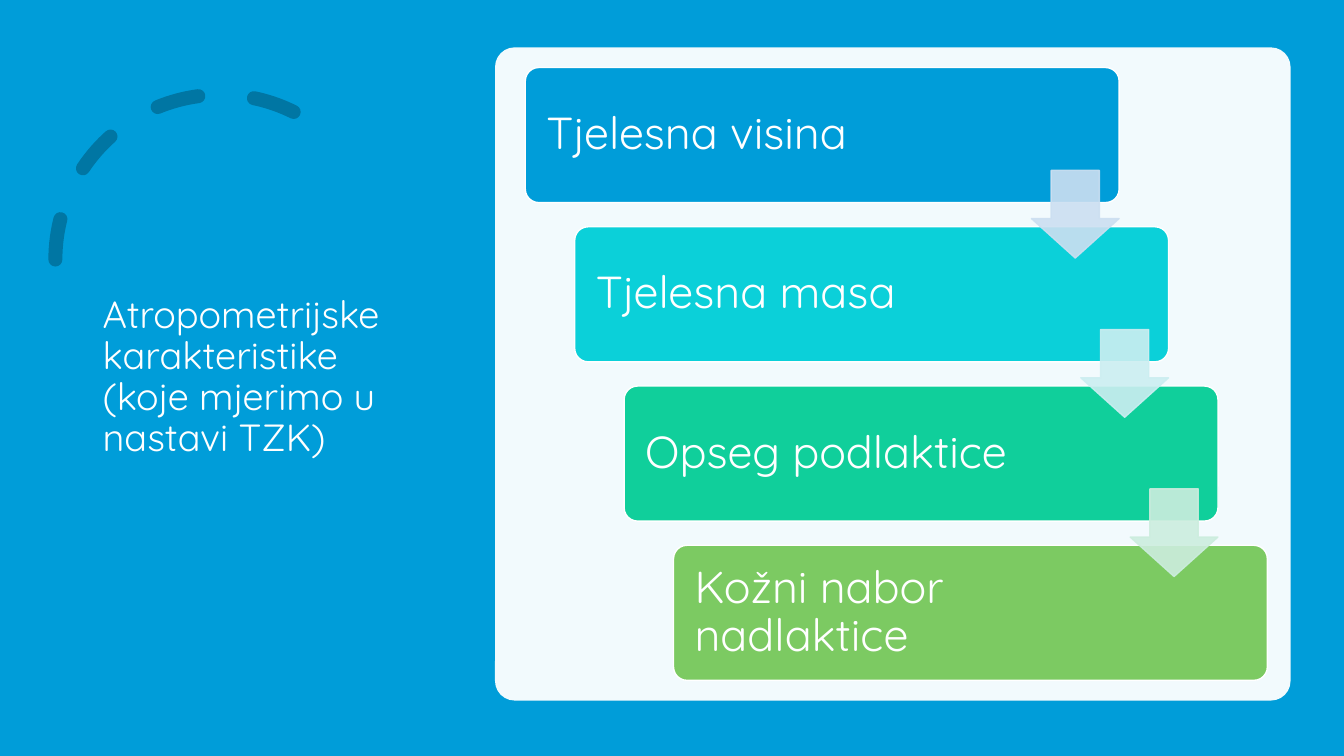
from dataclasses import dataclass

from lxml import etree
from pptx import Presentation
from pptx import util as u
from pptx.dml.color import RGBColor
from pptx.enum import dml, shapes, text
from pptx.oxml.ns import qn

PX = 9144


@dataclass(frozen=True)
class Theme:
    backdrop: str = "009DD9"
    arc: str = "0076A3"
    white: str = "FFFFFF"
    font: str = "Quicksand"
    title_size: int = 27
    step_size: int = 32


THEME = Theme()
TITLE = "Atropometrijske karakteristike (koje mjerimo u nastavi TZK)"
STEPS = [
    ("Tjelesna visina", "009DD9", "CCDFF1"),
    ("Tjelesna masa", "0BD0D9", "CCEEF1"),
    ("Opseg podlaktice", "10CF9B", "CCEDDE"),
    ("Kožni nabor nadlaktice", "7CCA62", None),
]
STEP_RIGHT = 49
STEP_DOWN = 158


def emu(*lengths):
    return [u.Emu(length * PX) for length in lengths]


def paint(fill, color, opacity=100):
    fill.solid()
    fill.fore_color.rgb = RGBColor.from_string(color)
    if opacity < 100:
        color_node = fill._xPr.find(qn("a:solidFill"))[0]
        etree.SubElement(color_node, qn("a:alpha"), val=str(opacity * 1000))


def add_panel(slide, preset, box, color, opacity=100, outline=None, adjust=()):
    panel = slide.shapes.add_shape(preset, *emu(*box))
    panel.shadow.inherit = False
    for index, value in enumerate(adjust):
        panel.adjustments[index] = value
    paint(panel.fill, color, opacity)
    if outline:
        panel.line.width = u.Pt(1)
        paint(panel.line.fill, outline, opacity)
    else:
        panel.line.fill.background()
    return panel


def write(holder, wording, size, margins):
    frame = holder.text_frame
    frame.word_wrap = True
    frame.vertical_anchor = text.MSO_ANCHOR.MIDDLE
    (frame.margin_left, frame.margin_top,
     frame.margin_right, frame.margin_bottom) = emu(*margins)
    frame.text = wording
    line = frame.paragraphs[0]
    line.alignment = text.PP_ALIGN.LEFT
    line.line_spacing = 0.9
    font = line.runs[0].font
    font.name = THEME.font
    font.size = u.Pt(size)
    font.color.rgb = RGBColor.from_string(THEME.white)


def add_dashed_arc(slide):
    arc = slide.shapes.add_shape(shapes.MSO_SHAPE.ARC, *emu(55, 94, 327, 327))
    arc.shadow.inherit = False
    arc.adjustments[0] = 146.13
    arc.adjustments[1] = 0
    arc.fill.background()
    paint(arc.line.fill, THEME.arc)
    arc.line.width = u.Pt(10)
    arc.line.dash_style = dml.MSO_LINE.DASH
    properties = arc._element.spPr
    properties.find(qn("a:xfrm")).set("flipH", "1")
    properties.find(qn("a:ln")).set("cap", "rnd")


def add_title(slide):
    title = slide.shapes.add_textbox(*emu(92, 70, 323, 609))
    write(title, TITLE, THEME.title_size, (10, 5, 10, 5))


def add_step(slide, index, wording, color):
    box = (521 + index * STEP_RIGHT, 67 + index * STEP_DOWN, 589, 134)
    step = add_panel(slide, shapes.MSO_SHAPE.ROUNDED_RECTANGLE, box, color,
                     outline=THEME.white, adjust=[0.1])
    write(step, wording, THEME.step_size, (17, 17, 153, 17))


def add_arrow(slide, index, color):
    box = (1023 + index * STEP_RIGHT, 169 + index * STEP_DOWN, 87, 87)
    add_panel(slide, shapes.MSO_SHAPE.DOWN_ARROW, box, color, opacity=90,
              outline=color, adjust=[0.55, 0.45])


def main():
    deck = Presentation()
    deck.slide_width, deck.slide_height = emu(1333, 750)
    slide = deck.slides.add_slide(deck.slide_layouts[6])
    add_panel(slide, shapes.MSO_SHAPE.RECTANGLE, (0, 0, 1333, 750), THEME.backdrop)
    add_dashed_arc(slide)
    add_title(slide)
    add_panel(slide, shapes.MSO_SHAPE.ROUNDED_RECTANGLE, (491, 47, 789, 648),
              THEME.white, opacity=95, adjust=[0.03])
    for index, (wording, color, _) in enumerate(STEPS):
        add_step(slide, index, wording, color)
    for index, (_, _, arrow_color) in enumerate(STEPS[:-1]):
        add_arrow(slide, index, arrow_color)
    deck.save("out.pptx")


if __name__ == "__main__":
    main()
